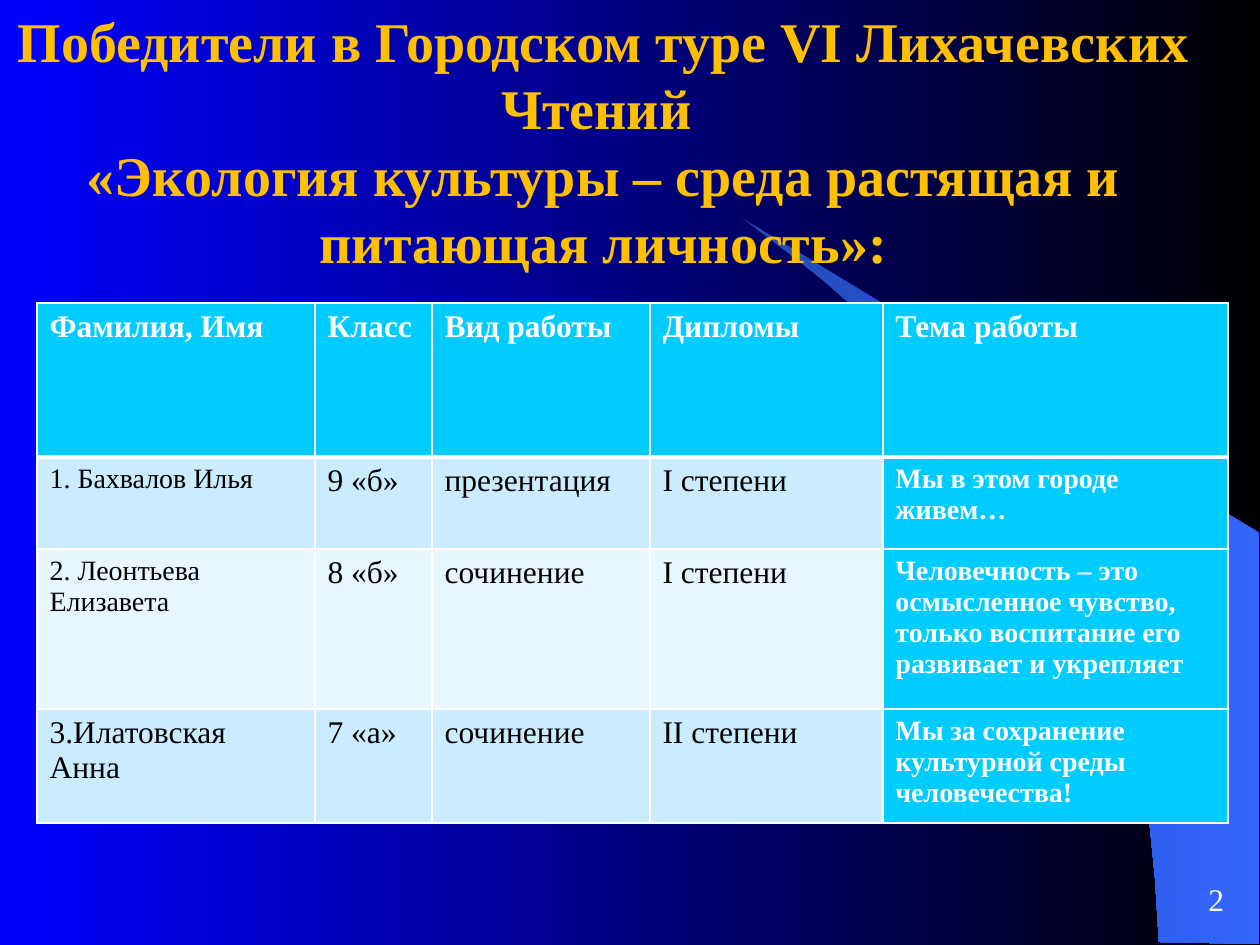
from pptx import Presentation
from pptx.dml.color import RGBColor
from pptx.enum.text import MSO_AUTO_SIZE, PP_ALIGN
from pptx.oxml.ns import qn
from pptx.util import Pt
from lxml.etree import SubElement

EMU_PER_PX = 914400 / 126
FONT = "Times New Roman"
COLORS = {
    "blue": "0000FF", "black": "000000", "white": "FFFFFF", "gold": "FFC000",
    "arc_dark": "2449B6", "arc_light": "3366FF",
    "accent": "00CCFF", "band_dark": "CBECFF", "band_light": "E7F6FF",
}
TITLE = [
    "Победители в Городском туре VI Лихачевских Чтений ",
    "«Экология культуры – среда растящая и питающая личность»:",
]
ARC_POINTS = [
    (1159, 942), (1259, 944), (1259, 533), (742, 218), (786, 251), (823, 280),
    (863, 315), (902, 353), (960, 416), (1012, 484), (1048, 543), (1081, 604),
    (1106, 665), (1125, 721), (1138, 767), (1150, 827), (1155, 877),
]
COLUMN_WIDTHS = [278, 117, 218, 233, 345]
ROW_HEIGHTS = [154, 92, 160, 114]
WINNERS = [
    ["Фамилия, Имя", "Класс", "Вид работы", "Дипломы", "Тема работы"],
    ["1. Бахвалов Илья", "9 «б»", "презентация", "I степени",
     "Мы в этом городе живем…"],
    ["2. Леонтьева Елизавета", "8 «б»", "сочинение", "I степени",
     "Человечность – это осмысленное чувство, только воспитание его "
     "развивает и укрепляет"],
    ["3.Илатовская Анна", "7 «а»", "сочинение", "II степени",
     "Мы за сохранение культурной среды человечества!"],
]
SMALL_CELLS = {(1, 0), (2, 0), (1, 4), (2, 4), (3, 4)}


def px(length):
    return round(length * EMU_PER_PX)


def rgb(name):
    return RGBColor.from_string(COLORS[name])


def fill_gradient(fill, *color_names):
    """Blend two colours from left to right."""
    fill.gradient()
    fill.gradient_angle = 0
    for stop, name in zip(fill.gradient_stops, color_names):
        stop.color.rgb = rgb(name)


def write_run(paragraph, text, color, size, bold=False):
    run = paragraph.add_run()
    run.text = text
    font_format = {"name": FONT, "size": Pt(size), "bold": bold}
    for attribute, value in font_format.items():
        setattr(run.font, attribute, value)
    run.font.color.rgb = rgb(color)


def add_text(slide, box, lines, color, size, bold=False, wrap=True,
             align=PP_ALIGN.LEFT):
    frame = slide.shapes.add_textbox(*map(px, box)).text_frame
    frame.word_wrap = wrap
    frame.auto_size = MSO_AUTO_SIZE.SHAPE_TO_FIT_TEXT
    for index, line in enumerate(lines):
        paragraph = frame.add_paragraph() if index else frame.paragraphs[0]
        paragraph.alignment = align
        write_run(paragraph, line, color, size, bold)


def add_arc(slide):
    builder = slide.shapes.build_freeform(*ARC_POINTS[0], scale=EMU_PER_PX)
    builder.add_line_segments(ARC_POINTS[1:], close=True)
    arc = builder.convert_to_shape()
    arc.shadow.inherit = False
    arc.line.fill.background()
    fill_gradient(arc.fill, "arc_dark", "arc_light")


def set_borders(cell, **widths):
    """Draw white cell borders; widths in points, keyed by L, R, T, B."""
    properties = cell._tc.get_or_add_tcPr()
    for side, width in widths.items():
        border = SubElement(properties, qn(f"a:ln{side}"), w=str(Pt(width)))
        solid = SubElement(border, qn("a:solidFill"))
        SubElement(solid, qn("a:srgbClr"), val=COLORS["white"])


def add_winners_table(slide):
    size = (sum(COLUMN_WIDTHS), sum(ROW_HEIGHTS))
    table = slide.shapes.add_table(
        len(WINNERS), len(COLUMN_WIDTHS), *map(px, (37, 303, *size))).table
    for column, width in zip(table.columns, COLUMN_WIDTHS):
        column.width = px(width)
    for row, height in zip(table.rows, ROW_HEIGHTS):
        row.height = px(height)
    last_column = len(COLUMN_WIDTHS) - 1
    for r, winner in enumerate(WINNERS):
        for c, text in enumerate(winner):
            cell = table.cell(r, c)
            accented = r == 0 or c == last_column
            band = "band_dark" if r % 2 else "band_light"
            set_borders(cell, L=1, R=1, T=3 if r == 1 else 1,
                        B=3 if r == 0 else 1)
            cell.fill.solid()
            cell.fill.fore_color.rgb = rgb("accent" if accented else band)
            write_run(cell.text_frame.paragraphs[0], text,
                      "white" if accented else "black",
                      16 if (r, c) in SMALL_CELLS else 18, accented)


def main():
    deck = Presentation()
    deck.slide_width, deck.slide_height = px(1260), px(945)
    slide = deck.slides.add_slide(deck.slide_layouts[6])
    fill_gradient(slide.background.fill, "blue", "black")
    add_arc(slide)
    add_text(slide, (1196, 874, 42, 50), ["2"], "white", 18, wrap=False)
    add_winners_table(slide)
    add_text(slide, (0, 0, 1207, 281), TITLE, "gold", 32, bold=True,
             align=PP_ALIGN.CENTER)
    deck.save("out.pptx")


if __name__ == "__main__":
    main()
